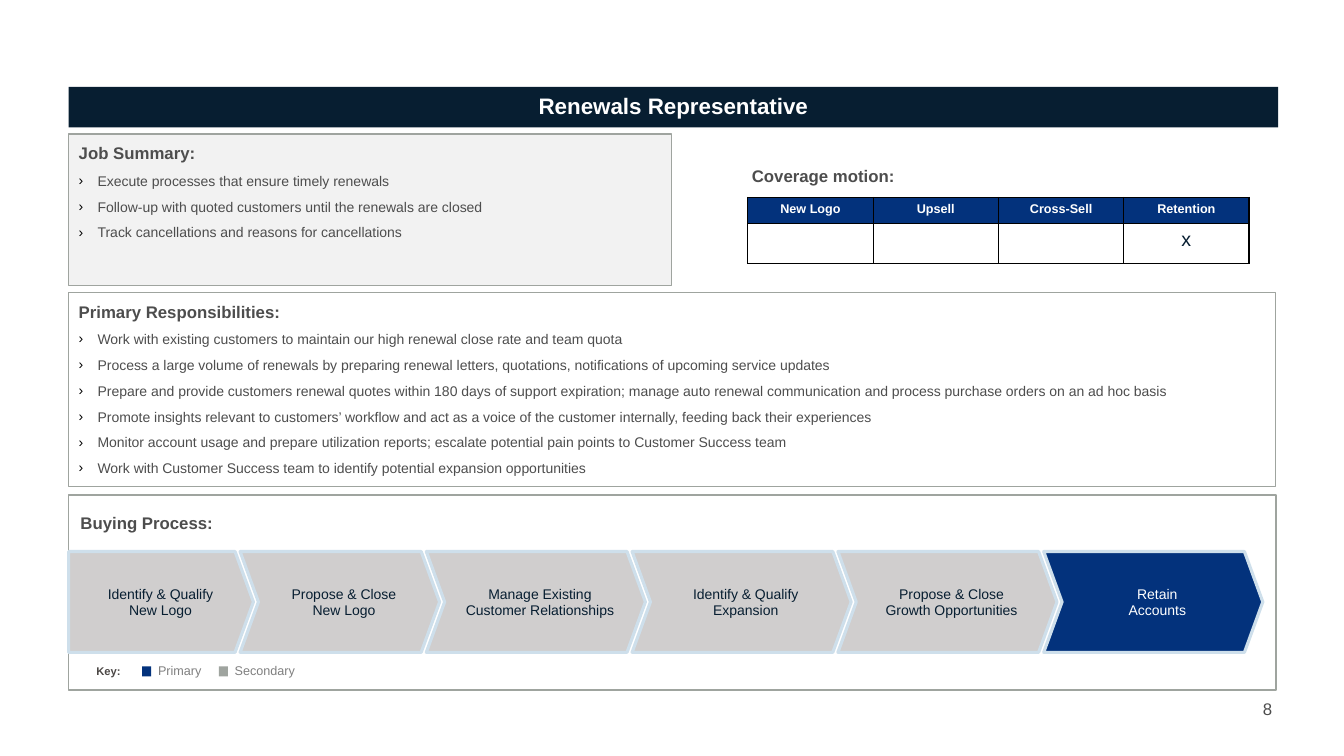
"""Build the Renewals Representative role slide."""
from lxml import etree
from pptx import Presentation
from pptx.dml.color import RGBColor
from pptx.enum.shapes import MSO_SHAPE
from pptx.enum.text import MSO_ANCHOR, MSO_AUTO_SIZE, PP_ALIGN
from pptx.oxml.ns import qn
from pptx.util import Pt

RECT, PLATE, ARROW = MSO_SHAPE.RECTANGLE, MSO_SHAPE.PENTAGON, MSO_SHAPE.CHEVRON
TOP, MIDDLE = MSO_ANCHOR.TOP, MSO_ANCHOR.MIDDLE
LEFT, CENTER = PP_ALIGN.LEFT, PP_ALIGN.CENTER
FIXED = MSO_AUTO_SIZE.NONE
NAVY = RGBColor(0x07, 0x1E, 0x31)
BLUE = RGBColor(0x03, 0x32, 0x7C)
PALE = RGBColor(0xCE, 0xDF, 0xEB)
SILVER = RGBColor(0xD0, 0xCE, 0xCE)
GRAY = RGBColor(0x9F, 0xA4, 0x9F)
LIGHT = RGBColor(0xF2, 0xF2, 0xF2)
WHITE = RGBColor(0xFF, 0xFF, 0xFF)
DARK = RGBColor(0x4D, 0x4D, 0x4D)
BROWN = RGBColor(0x4C, 0x48, 0x46)
MID = RGBColor(0x7F, 0x7F, 0x7F)


def write(frame, text, size=10, color=DARK, bold=False, align=LEFT,
          space=1.0, before=0, after=0, bullet=None):
    para = frame.paragraphs[-1]
    if para.runs:
        para = frame.add_paragraph()
    props = para._p.get_or_add_pPr()
    indent = 13.5 if bullet else 0
    props.set("marL", str(Pt(indent)))
    props.set("indent", str(-Pt(indent)))
    if bullet:
        tint = etree.SubElement(props, qn("a:buClr"))
        etree.SubElement(tint, qn("a:srgbClr"), val="000000")
        etree.SubElement(props, qn("a:buFont"), typeface="Arial")
        etree.SubElement(props, qn("a:buChar"), char=bullet)
    else:
        etree.SubElement(props, qn("a:buNone"))
    para.alignment, para.line_spacing = align, space
    para.space_before, para.space_after = Pt(before), Pt(after)
    for num, line in enumerate(text.split("\n")):
        if num:
            para.add_line_break()
        run = para.add_run()
        run.text = line
        run.font.name, run.font.size, run.font.bold = "Arial", Pt(size), bold
        run.font.color.rgb = color
    for gap in para._p.findall(qn("a:br")):
        etree.SubElement(gap, qn("a:rPr"), sz=str(size * 100))


def draw(kind, left, top, width, height, fill=None, line=None, weight=1):
    shape = slide.shapes.add_shape(kind, Pt(left), Pt(top), Pt(width), Pt(height))
    shape.shadow.inherit = False
    if fill is None:
        shape.fill.background()
    else:
        shape.fill.solid()
        shape.fill.fore_color.rgb = fill
    if line is None:
        shape.line.fill.background()
    else:
        shape.line.color.rgb = line
        shape.line.width = Pt(weight)
    return shape


deck = Presentation()
deck.slide_width, deck.slide_height = Pt(960), Pt(540)
slide = deck.slides.add_slide(deck.slide_layouts[3])
title, job, duty = slide.placeholders

title.left, title.top, title.width, title.height = Pt(49), Pt(62), Pt(864), Pt(29)
title.fill.solid()
title.fill.fore_color.rgb = NAVY
frame = title.text_frame
frame.auto_size, frame.vertical_anchor = FIXED, MIDDLE
frame.margin_left = frame.margin_right = frame.margin_top = frame.margin_bottom = 0
write(frame, "Renewals Representative", size=16, color=WHITE, bold=True,
      align=CENTER, space=0.9)

panels = [
    (job, 95.8, 430.5, 108, LIGHT, "Job Summary:", [
        "Execute processes that ensure timely renewals",
        "Follow-up with quoted customers until the renewals are closed",
        "Track cancellations and reasons for cancellations"]),
    (duty, 209, 862, 138.5, WHITE, "Primary Responsibilities:", [
        "Work with existing customers to maintain our high renewal close rate and team quota",
        "Process a large volume of renewals by preparing renewal letters, quotations, "
        "notifications of upcoming service updates",
        "Prepare and provide customers renewal quotes within 180 days of support expiration; "
        "manage auto renewal communication and process purchase orders on an ad hoc basis",
        "Promote insights relevant to customers’ workflow and act as a voice of the customer "
        "internally, feeding back their experiences",
        "Monitor account usage and prepare utilization reports; escalate potential pain points "
        "to Customer Success team",
        "Work with Customer Success team to identify potential expansion opportunities"]),
]
for body, top, width, height, fill, head, items in panels:
    body.left, body.top, body.width, body.height = Pt(49), Pt(top), Pt(width), Pt(height)
    body.fill.solid()
    body.fill.fore_color.rgb = fill
    body.line.color.rgb = GRAY
    body.line.width = Pt(1)
    frame = body.text_frame
    frame.auto_size, frame.vertical_anchor = FIXED, TOP
    write(frame, head, size=12, bold=True, space=1.2, after=2)
    for item in items:
        write(frame, item, space=1.2, before=2, after=2, bullet="›")

draw(RECT, 49, 353.5, 862.5, 139.5, line=GRAY)
for left, fill in [(101.5, BLUE), (156.3, GRAY)]:
    draw(RECT, left, 476, 6.5, 7.2, fill=fill)

labels = [
    ("Buying Process:", 50.4, 363, 242, 21.6, dict(size=12, bold=True)),
    ("Coverage motion:", 530, 115.2, 168.5, 21.6, dict(size=12, bold=True)),
    ("Key:", 49, 471, 57, 17, dict(size=8, color=BROWN, bold=True, align=CENTER)),
    ("Primary", 105.8, 470.2, 54, 18, dict(size=9, color=MID)),
    ("Secondary", 160.6, 470.2, 69, 18, dict(size=9, color=MID)),
]
for text, left, top, width, height, style in labels:
    label = slide.shapes.add_textbox(Pt(left), Pt(top), Pt(width), Pt(height))
    label.text_frame.word_wrap = True
    write(label.text_frame, text, **style)

page = slide.shapes.add_textbox(Pt(902), Pt(499), Pt(24.5), Pt(14.4))
frame = page.text_frame
frame.word_wrap, frame.vertical_anchor = True, MIDDLE
frame.margin_left = frame.margin_right = frame.margin_top = frame.margin_bottom = 0
write(frame, "8", size=12)

steps = [
    ("Identify & Qualify\nNew Logo", 132),
    ("Propose & Close\nNew Logo", 142.5),
    ("Manage Existing\nCustomer Relationships", 156.5),
    ("Identify & Qualify\nExpansion", 156.5),
    ("Propose & Close\nGrowth Opportunities", 156.5),
    ("Retain\nAccounts", 156.5),
]
left = 49
for num, (text, width) in enumerate(steps):
    main = num == len(steps) - 1
    step = draw(ARROW if num else PLATE, left, 394, width, 72,
                fill=BLUE if main else SILVER, line=PALE, weight=2.25)
    step.adjustments[0] = 0.182
    frame = step.text_frame
    frame.word_wrap, frame.vertical_anchor = True, MIDDLE
    frame.margin_left, frame.margin_right = Pt(5.8), 0
    frame.margin_top = frame.margin_bottom = Pt(8.6)
    write(frame, text, color=WHITE if main else NAVY, align=CENTER)
    left += width - 9.5

rows = [["New Logo", "Upsell", "Cross-Sell", "Retention"], ["", "", "", "x"]]
grid = slide.shapes.add_table(2, 4, Pt(534.2), Pt(141), Pt(358), Pt(42.2)).table
for col in grid.columns:
    col.width = Pt(89.5)
for row, high in zip(grid.rows, [18.6, 23.6]):
    row.height = Pt(high)
for num, texts in enumerate(rows):
    for cell, text in zip(grid.rows[num].cells, texts):
        props = cell._tc.get_or_add_tcPr()
        for side in ("lnL", "lnR", "lnT", "lnB"):
            edge = etree.SubElement(props, qn("a:" + side), w=str(Pt(1)))
            paint = etree.SubElement(edge, qn("a:solidFill"))
            etree.SubElement(paint, qn("a:srgbClr"), val="000000")
        if num:
            cell.fill.background()
            write(cell.text_frame, text, size=14, color=NAVY, align=CENTER)
        else:
            cell.fill.solid()
            cell.fill.fore_color.rgb = BLUE
            write(cell.text_frame, text, size=9, color=WHITE, bold=True, align=CENTER)

deck.save("out.pptx")
